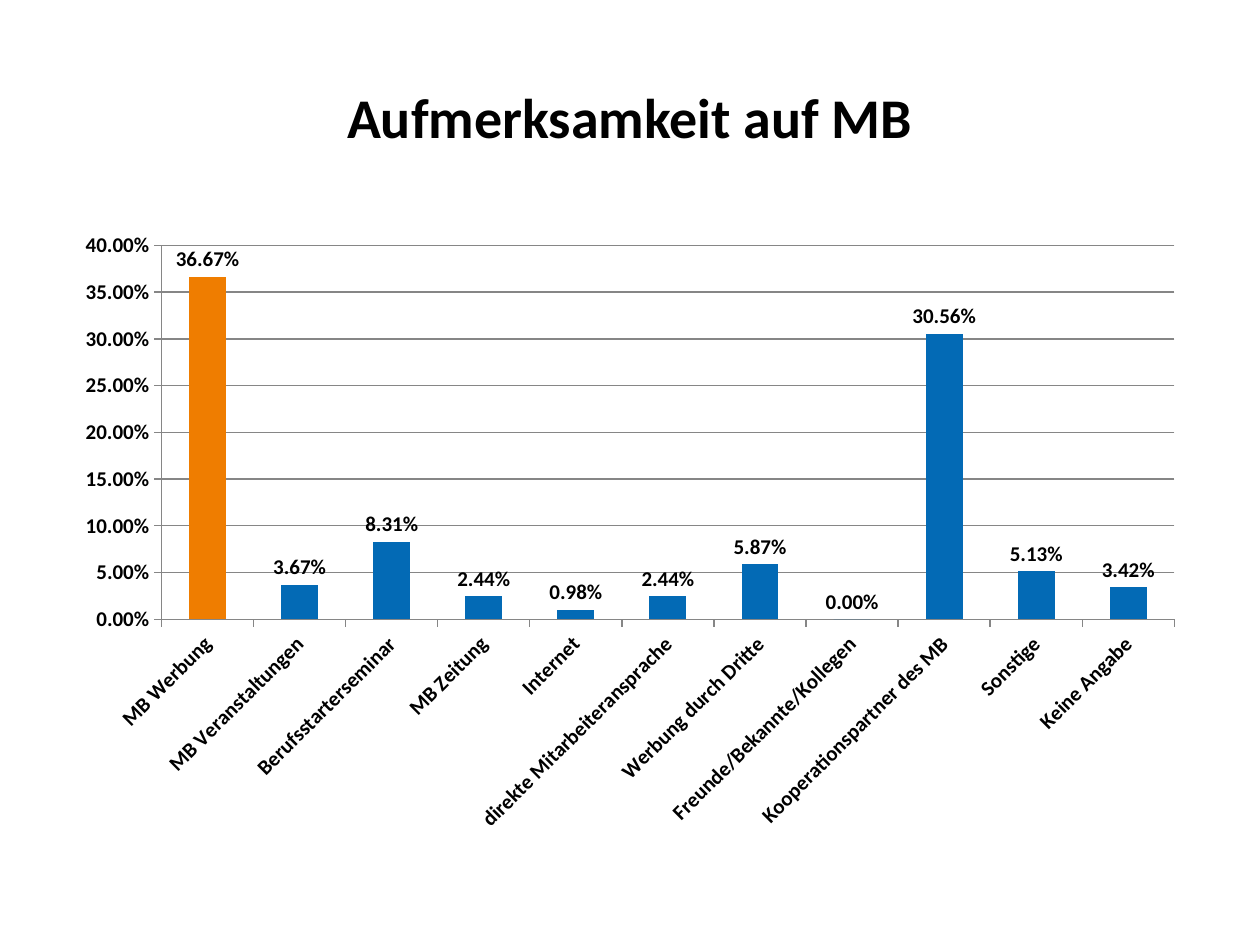
import pptx
import pptx.chart.data
import pptx.dml.color
import pptx.enum.chart
import pptx.enum.text
import pptx.util


def color(hex_code):
    return pptx.dml.color.RGBColor.from_string(hex_code)


class SlideBuilder:
    FONT = "Calibri"
    TEXT, BAR, HIGHLIGHT, LINE = "000000", "036AB5", "EF7D00", "868686"
    PERCENT = "0.00%"

    def __init__(self, deck):
        self.width, self.height = deck.slide_width, deck.slide_height
        self.slide = deck.slides.add_slide(deck.slide_layouts[6])

    def area(self, left, top, width, height):
        """Turn shares of the slide's size into lengths."""
        return (int(left * self.width), int(top * self.height),
                int(width * self.width), int(height * self.height))

    def style_font(self, font, size):
        font.name, font.size, font.bold = self.FONT, pptx.util.Pt(size), True
        font.color.rgb = color(self.TEXT)

    def title(self, text, *shares):
        frame = self.slide.shapes.add_textbox(*self.area(*shares)).text_frame
        frame.word_wrap = True
        frame.vertical_anchor = pptx.enum.text.MSO_ANCHOR.MIDDLE
        heading = frame.paragraphs[0]
        heading.alignment = pptx.enum.text.PP_ALIGN.CENTER
        run = heading.add_run()
        run.text = text
        self.style_font(run.font, 32)

    def style_line(self, line):
        line.color.rgb = color(self.LINE)
        line.width = pptx.util.Pt(0.75)

    def column_chart(self, answers, highlighted, *shares):
        data = pptx.chart.data.CategoryChartData(number_format=self.PERCENT)
        data.categories = list(answers)
        data.add_series("Series 1", list(answers.values()))
        chart = self.slide.shapes.add_chart(
            pptx.enum.chart.XL_CHART_TYPE.COLUMN_CLUSTERED,
            *self.area(*shares), data).chart
        chart.has_legend = chart.has_title = False
        self.style_font(chart.font, 12)

        # Columns and their values
        plot = chart.plots[0]
        plot.gap_width = 150
        plot.vary_by_categories = False
        columns = plot.series[0]
        columns.invert_if_negative = False
        for part, fill in ((columns, self.BAR),
                           (columns.points[highlighted], self.HIGHLIGHT)):
            part.format.fill.solid()
            part.format.fill.fore_color.rgb = color(fill)
        labels = columns.data_labels
        labels.show_value = True
        labels.number_format, labels.number_format_is_linked = self.PERCENT, False
        labels.position = pptx.enum.chart.XL_LABEL_POSITION.OUTSIDE_END
        self.style_font(labels.font, 12)

        # Axes, with slanted category names
        for axis in (chart.category_axis, chart.value_axis):
            axis.major_tick_mark = pptx.enum.chart.XL_TICK_MARK.OUTSIDE
            axis.minor_tick_mark = pptx.enum.chart.XL_TICK_MARK.NONE
            self.style_font(axis.tick_labels.font, 12)
            self.style_line(axis.format.line)
        slanted = chart.category_axis._element.txPr.bodyPr
        slanted.set("rot", str(-45 * 60000))
        slanted.set("vert", "horz")
        scale = chart.value_axis
        scale.minimum_scale, scale.maximum_scale, scale.major_unit = 0, 0.4, 0.05
        scale.tick_labels.number_format = self.PERCENT
        scale.tick_labels.number_format_is_linked = False
        scale.has_major_gridlines = True
        self.style_line(scale.major_gridlines.format.line)


def main():
    deck = pptx.Presentation()
    deck.slide_width, deck.slide_height = pptx.util.Inches(10), pptx.util.Inches(7.5)
    builder = SlideBuilder(deck)
    margin, content_width = 0.05, 0.9

    # Heading
    builder.title("Aufmerksamkeit auf MB", margin, 0.04, content_width, 1 / 6)

    # Share of answers per source of attention
    answers = {
        "MB Werbung": 0.3667,
        "MB Veranstaltungen": 0.0367,
        "Berufsstarterseminar": 0.0831,
        "MB Zeitung": 0.0244,
        "Internet": 0.0098,
        "direkte Mitarbeiteransprache": 0.0244,
        "Werbung durch Dritte": 0.0587,
        "Freunde/Bekannte/Kollegen": 0,
        "Kooperationspartner des MB": 0.3056,
        "Sonstige": 0.0513,
        "Keine Angabe": 0.0342,
    }
    builder.column_chart(answers, 0, margin, 7 / 30, content_width, 0.66)

    deck.save("out.pptx")


if __name__ == "__main__":
    main()
